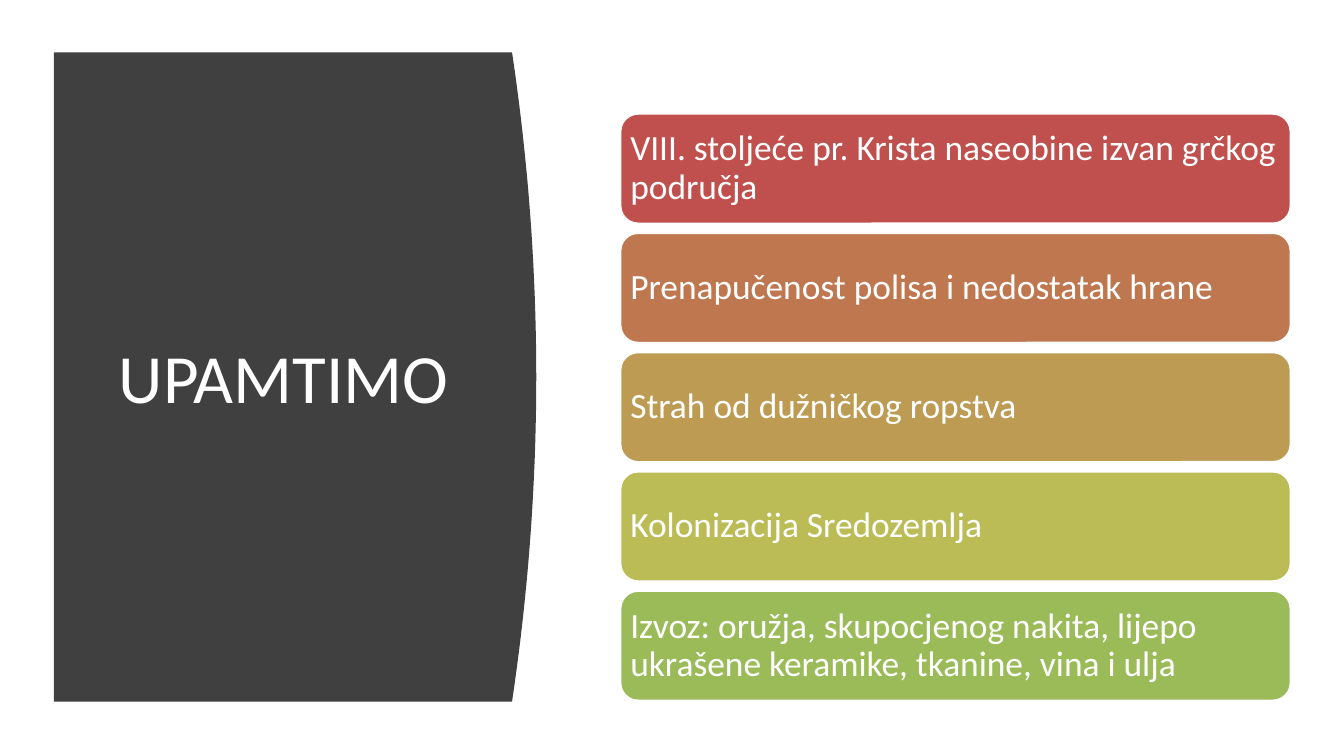
import pptx
import pptx.util
import pptx.dml.color
import pptx.enum.shapes
import pptx.enum.text

Inches = pptx.util.Inches
Pt = pptx.util.Pt
ALIGN = pptx.enum.text.PP_ALIGN
MIDDLE = pptx.enum.text.MSO_ANCHOR.MIDDLE
WHITE = "FFFFFF"


def color(text):
    return pptx.dml.color.RGBColor.from_string(text)


def style(para, size, align):
    para.alignment = align
    para.font.name = "Calibri"
    para.font.size = Pt(size)
    para.font.color.rgb = color(WHITE)


deck = pptx.Presentation()
deck.slide_width = Inches(10)
deck.slide_height = Inches(10 * 9 / 16)
slide = deck.slides.add_slide(deck.slide_layouts[5])
shapes = slide.shapes

# Title
title = shapes.title
title.left, title.top = Inches(0.71), Inches(0.83)
title.width, title.height = Inches(2.8), Inches(3.93)
title.text_frame.text = "UPAMTIMO"
title.text_frame.vertical_anchor = MIDDLE
style(title.text_frame.paragraphs[0], 37, ALIGN.CENTER)

# Dark panel with a bulging right edge, placed behind the title
left, top, bottom = 0.4, 0.39, 5.22
edge, bulge, steps = 3.81, 0.18, 40
curve = []
for i in range(steps + 1):
    t = i / steps
    x = edge + bulge * 4 * t * (1 - t)
    curve.append((Inches(x), Inches(top + (bottom - top) * t)))
path = shapes.build_freeform(Inches(left), Inches(top))
path.add_line_segments(curve + [(Inches(left), Inches(bottom))], close=True)
panel = path.convert_to_shape()
panel.shadow.inherit = False
panel.fill.solid()
panel.fill.fore_color.rgb = color("404040")
panel.line.fill.background()
title.element.addprevious(panel.element)

# Key points
points = [
    ("VIII. stoljeće pr. Krista naseobine izvan grčkog područja", "C0504D"),
    ("Prenapučenost polisa i nedostatak hrane", "BF7750"),
    ("Strah od dužničkog ropstva", "BD9B53"),
    ("Kolonizacija Sredozemlja", "BCBC56"),
    ("Izvoz: oružja, skupocjenog nakita, lijepo ukrašene keramike, "
     "tkanine, vina i ulja", "9BBB59"),
]
first, last = 0.84, 4.39
pitch = (last - first) / (len(points) - 1)
for i, (text, fill) in enumerate(points):
    bar = shapes.add_shape(
        pptx.enum.shapes.MSO_SHAPE.ROUNDED_RECTANGLE,
        Inches(4.61), Inches(first + i * pitch), Inches(5), Inches(0.83))
    bar.shadow.inherit = False
    bar.fill.solid()
    bar.fill.fore_color.rgb = color(fill)
    bar.line.color.rgb = color(WHITE)
    bar.line.width = Pt(2)
    frame = bar.text_frame
    frame.word_wrap = True
    frame.vertical_anchor = MIDDLE
    frame.margin_left = frame.margin_right = Inches(0.04)
    frame.margin_top = frame.margin_bottom = Inches(0.04)
    frame.text = text
    para = frame.paragraphs[0]
    para.line_spacing = 0.9
    style(para, 19, ALIGN.LEFT)

deck.save("out.pptx")
